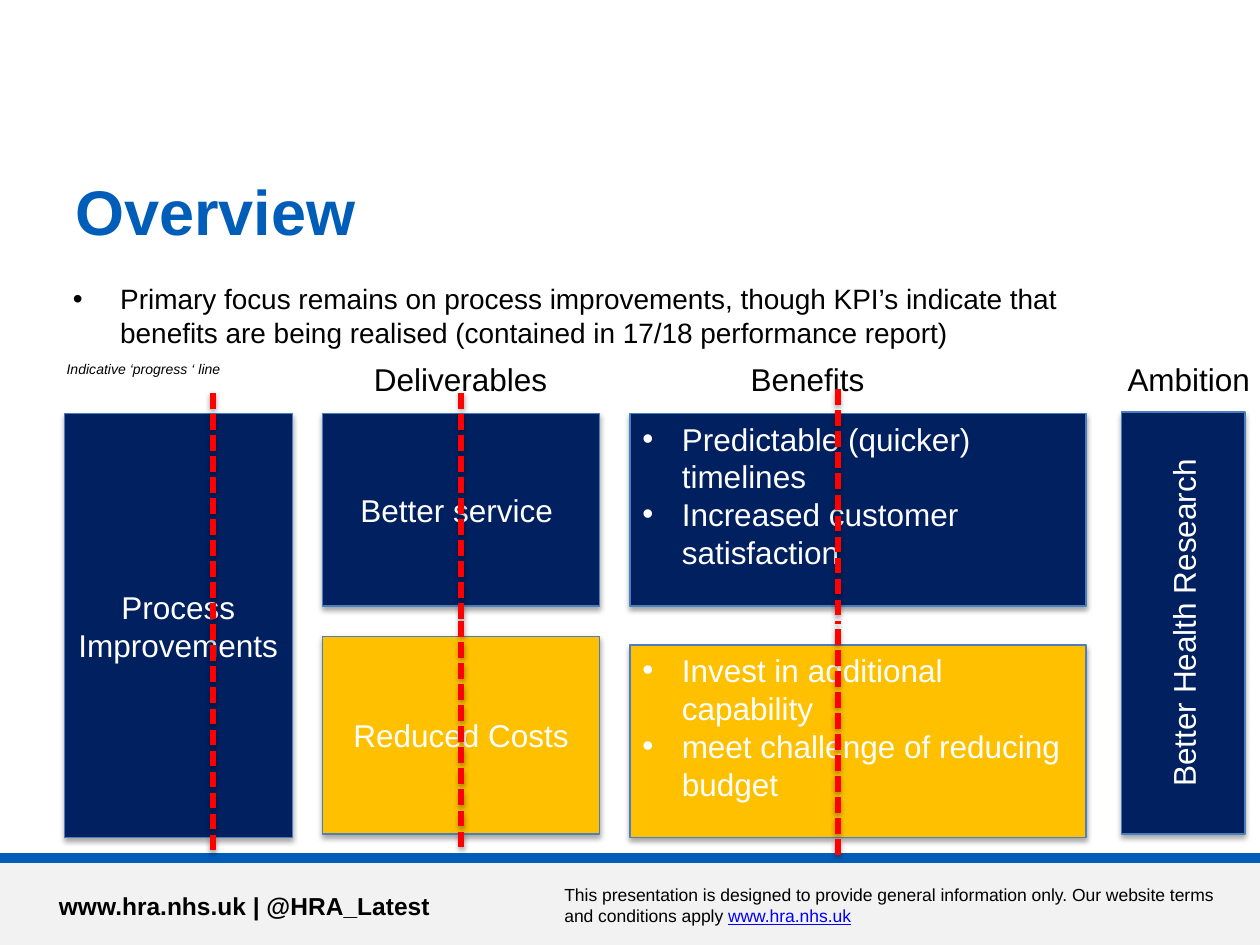
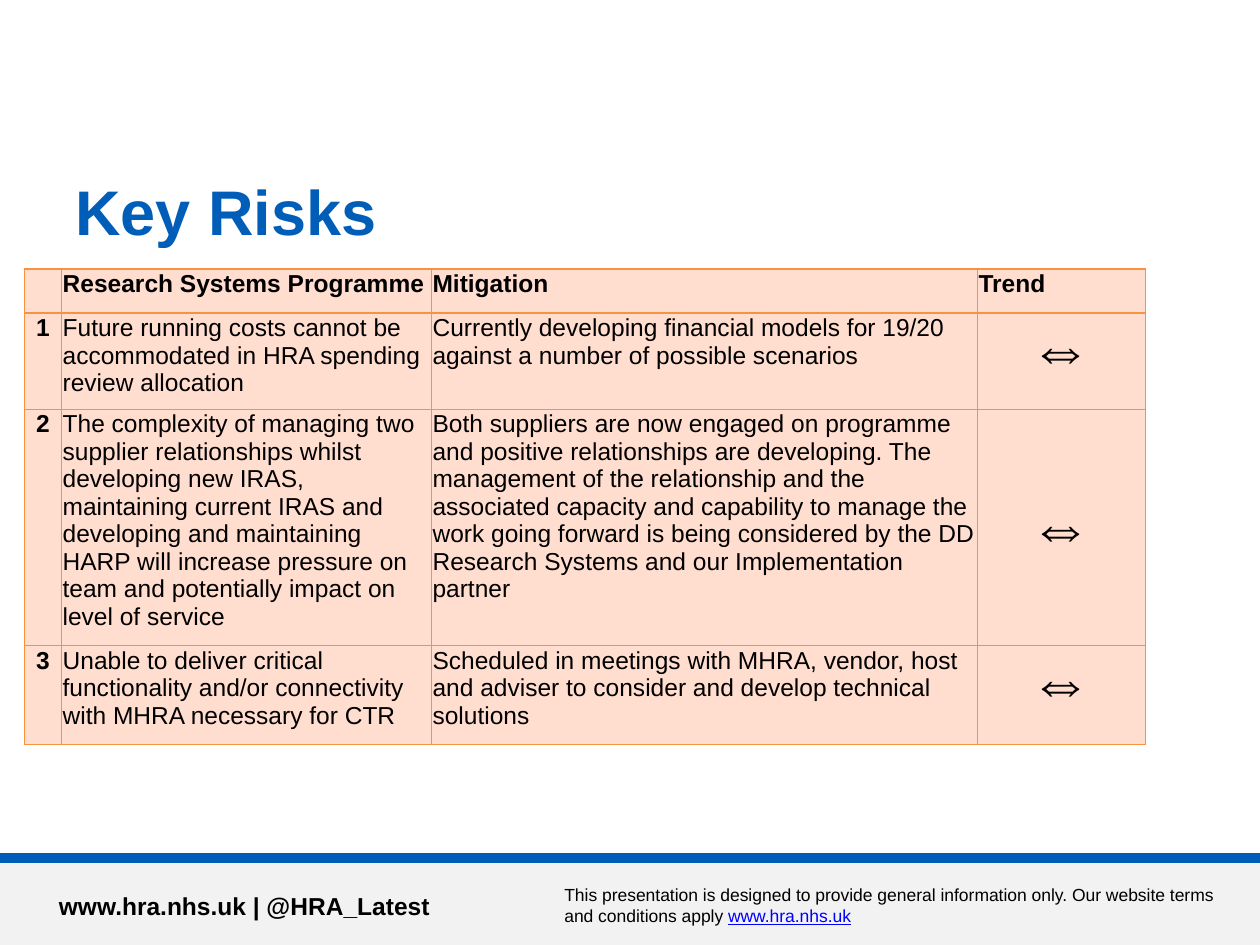
from lxml.etree import SubElement
from pptx import Presentation
from pptx.dml.color import RGBColor
from pptx.enum.dml import MSO_LINE
from pptx.enum.shapes import MSO_CONNECTOR, MSO_SHAPE
from pptx.enum.text import MSO_ANCHOR, PP_ALIGN
from pptx.oxml.ns import qn
from pptx.util import Pt

FONT = "Arial"
BLUE, NAVY, GOLD, RED = "005EB8", "002060", "FFC000", "FF0000"
BLACK, WHITE, GREY, LINK = "000000", "FFFFFF", "F2F2F2", "0000FF"
BOX_EDGE, TABLE_EDGE, TABLE_FILL = "4B7EBC", "F69240", "FFDDCF"
SITE = "www.hra.nhs.uk"


def rgb(value):
    return RGBColor.from_string(value)


def add_run(paragraph, text, size=18, color=BLACK, bold=False, italic=False, underline=False):
    run = paragraph.add_run()
    run.text = text
    font = run.font
    font.name, font.size, font.bold, font.italic = FONT, Pt(size), bold, italic
    font.underline = underline
    font.color.rgb = rgb(color)


def write(frame, *lines, align=PP_ALIGN.LEFT, indent=0, **style):
    for index, line in enumerate(lines):
        paragraph = frame.add_paragraph() if index else frame.paragraphs[0]
        paragraph.alignment = align
        if indent:
            properties = paragraph._p.get_or_add_pPr()
            properties.set("marL", str(Pt(indent)))
            properties.set("indent", str(-Pt(indent)))
            SubElement(properties, qn("a:buFont"), typeface=FONT)
            SubElement(properties, qn("a:buChar"), char="•")
        add_run(paragraph, line, **style)
    return paragraph


def add_effects(element, opacity=0, distance=0):
    effects = SubElement(element.spPr, qn("a:effectLst"))
    if opacity:
        shadow = SubElement(effects, qn("a:outerShdw"), blurRad=str(Pt(3.1)),
                            dist=str(Pt(distance)), dir="5400000", rotWithShape="0")
        tone = SubElement(shadow, qn("a:srgbClr"), val=BLACK)
        SubElement(tone, qn("a:alpha"), val=str(opacity * 1000))


class Deck:
    def __init__(self):
        self.presentation = Presentation()
        self.presentation.slide_width = Pt(720)
        self.presentation.slide_height = Pt(540)
        self.slide = None

    def start(self, title):
        layout = self.presentation.slide_layouts[6]
        self.slide = self.presentation.slides.add_slide(layout)
        self.box(0, 490.3, 720, 49.7, GREY)
        self.line(0, 490.3, 720, 490.3, BLUE, 6)
        self.text(26.6, 505.4, 230.4, 28.8, f"{SITE} | @HRA_Latest", size=14, bold=True)
        terms = self.text(315.4, 501.8, 388.8, 36,
                          "This presentation is designed to provide general information only. "
                          "Our website terms and conditions apply ", size=10)
        add_run(terms, SITE, size=10, color=LINK, underline=True)
        self.text(36, 93.5, 612, 53.3, title, anchor=MSO_ANCHOR.MIDDLE,
                  size=36, color=BLUE, bold=True)

    def text(self, left, top, width, height, *lines, wrap=True, anchor=MSO_ANCHOR.TOP, **style):
        area = self.slide.shapes.add_textbox(Pt(left), Pt(top), Pt(width), Pt(height))
        area.text_frame.word_wrap = wrap
        area.text_frame.vertical_anchor = anchor
        return write(area.text_frame, *lines, **style)

    def box(self, left, top, width, height, fill, *lines, bullets=False, upward=False):
        box = self.slide.shapes.add_shape(MSO_SHAPE.RECTANGLE, Pt(left), Pt(top),
                                          Pt(width), Pt(height))
        box.fill.solid()
        box.fill.fore_color.rgb = rgb(fill)
        if not lines:
            box.line.fill.background()
            box.shadow.inherit = False
            return
        box.line.color.rgb = rgb(BOX_EDGE)
        box.line.width = Pt(0.75)
        add_effects(box._element, opacity=35, distance=1.8)
        frame = box.text_frame
        frame.word_wrap = True
        frame.vertical_anchor = MSO_ANCHOR.TOP if bullets else MSO_ANCHOR.MIDDLE
        if upward:
            frame._txBody.bodyPr.set("vert", "vert270")
        write(frame, *lines, color=WHITE, indent=22.5 if bullets else 0,
              align=PP_ALIGN.LEFT if bullets else PP_ALIGN.CENTER)

    def line(self, x1, y1, x2, y2, color, width, dashed=False):
        line = self.slide.shapes.add_connector(MSO_CONNECTOR.STRAIGHT,
                                               Pt(x1), Pt(y1), Pt(x2), Pt(y2))
        line.line.color.rgb = rgb(color)
        line.line.width = Pt(width)
        if dashed:
            line.line.dash_style = MSO_LINE.SQUARE_DOT
            add_effects(line._element, opacity=38, distance=1.6)
        else:
            add_effects(line._element)

    def cell(self, cell, text, anchor=MSO_ANCHOR.TOP, **style):
        cell.margin_left = cell.margin_right = cell.margin_top = Pt(0.72)
        cell.margin_bottom = 0
        cell.vertical_anchor = anchor
        properties = cell._tc.get_or_add_tcPr()
        for side in ("lnL", "lnR", "lnT", "lnB"):
            edge = SubElement(properties, qn(f"a:{side}"), w=str(Pt(0.75)))
            fill = SubElement(edge, qn("a:solidFill"))
            SubElement(fill, qn("a:srgbClr"), val=TABLE_EDGE)
        cell.fill.solid()
        cell.fill.fore_color.rgb = rgb(TABLE_FILL)
        write(cell.text_frame, text, **style)

    def table(self, left, top, widths, heights):
        table = self.slide.shapes.add_table(len(heights), len(widths), Pt(left), Pt(top),
                                            Pt(sum(widths)), Pt(sum(heights))).table
        for column, width in zip(table.columns, widths):
            column.width = Pt(width)
        for row, height in zip(table.rows, heights):
            row.height = Pt(height)
        return table


def build_overview(deck):
    deck.start("Overview")
    deck.text(34.6, 157.5, 617, 60,
              "Primary focus remains on process improvements, though KPI’s indicate that "
              "benefits are being realised (contained in 17/18 performance report)",
              size=16, indent=27)

    deck.box(36.7, 236.2, 130.3, 242.6, NAVY, "Process Improvements")
    deck.box(184.3, 236.2, 158.4, 110.2, NAVY, "Better service ")
    deck.box(184.3, 363.6, 158.4, 113, GOLD, "Reduced Costs")
    deck.box(360, 236.2, 260.6, 110.2, NAVY, "Predictable (quicker) timelines",
             "Increased customer satisfaction", bullets=True)
    deck.box(360, 368.6, 260.6, 110.2, GOLD, "Invest in additional capability",
             "meet challenge of reducing budget", bullets=True)
    deck.box(640.8, 235.4, 70.6, 241.2, NAVY, "Better Health Research", upward=True)

    for left, width, stage in ((206.6, 119.5, "Deliverables"), (421.9, 80, "Benefits"),
                               (637.2, 85, "Ambition")):
        deck.text(left, 202.3, width, 28.8, stage, wrap=False)
    deck.text(31, 202.3, 103.7, 17.3, "Indicative ‘progress ‘ line", wrap=False,
              size=8, italic=True)

    for x, start, end in ((121.7, 224.6, 488.2), (263.5, 224.6, 356.4), (263.5, 355, 486.7),
                          (478.8, 222.5, 356.4), (478.8, 359.3, 491)):
        deck.line(x, start, x, end, RED, 3, dashed=True)


def build_key_risks(deck):
    deck.start("Key Risks")
    table = deck.table(14, 153.7, (21.1, 211.4, 312, 96), (25.2, 54.9, 126.9, 56.6))
    headings = ("", "Research Systems Programme", "Mitigation", "Trend")
    risks = (
        ("Future running costs cannot be accommodated in HRA spending review allocation",
         "Currently developing financial models for 19/20 against a number of possible scenarios",
         MSO_ANCHOR.TOP),
        ("The complexity of managing two supplier relationships whilst developing new IRAS, "
         "maintaining current IRAS and developing and maintaining HARP will increase pressure "
         "on team and potentially impact on level of service",
         "Both suppliers are now engaged on programme and positive relationships are developing. "
         "The management of the relationship and the associated capacity and capability to manage "
         "the work going forward is being considered by the DD Research Systems and our "
         "Implementation partner",
         MSO_ANCHOR.MIDDLE),
        ("Unable to deliver critical functionality and/or connectivity with MHRA necessary for CTR",
         "Scheduled in meetings with MHRA, vendor, host and adviser to consider and develop "
         "technical solutions",
         MSO_ANCHOR.TOP),
    )
    for column, heading in enumerate(headings):
        deck.cell(table.cell(0, column), heading, size=14, bold=True)
    for number, (risk, mitigation, trend_anchor) in enumerate(risks, 1):
        deck.cell(table.cell(number, 0), str(number), size=14, bold=True, align=PP_ALIGN.CENTER)
        deck.cell(table.cell(number, 1), risk, size=14)
        deck.cell(table.cell(number, 2), mitigation, size=14)
        deck.cell(table.cell(number, 3), "⇔", size=36, align=PP_ALIGN.CENTER, anchor=trend_anchor)


def main():
    deck = Deck()
    build_overview(deck)
    build_key_risks(deck)
    deck.presentation.save("out.pptx")


if __name__ == "__main__":
    main()
